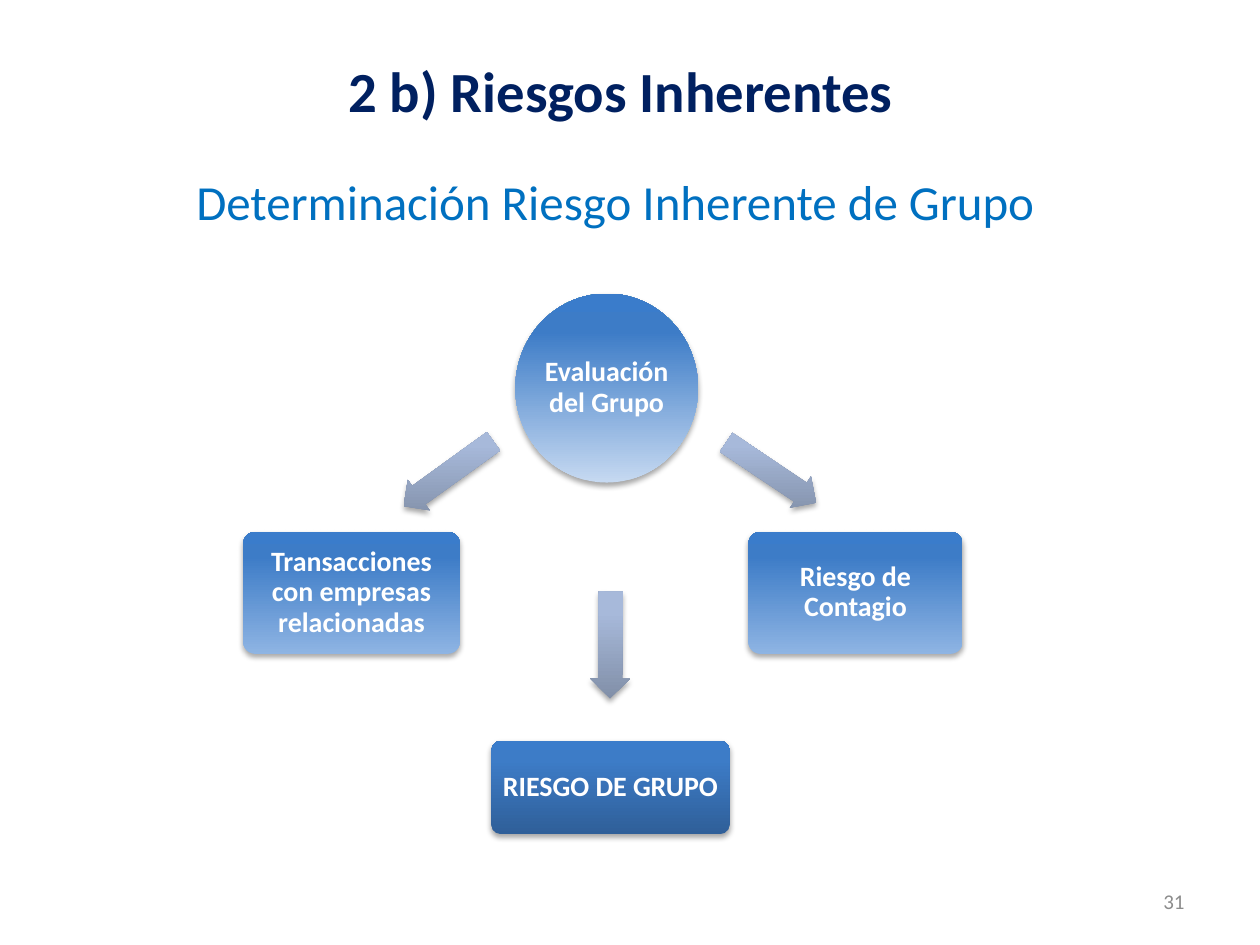
"""Builds the slide on how the inherent risk of a group is determined."""
from pptx import Presentation
from pptx.dml.color import RGBColor
from pptx.enum.shapes import MSO_SHAPE
from pptx.enum.text import MSO_ANCHOR, PP_ALIGN
from pptx.oxml import parse_xml
from pptx.oxml.ns import nsdecls
from pptx.util import Inches, Pt

OVAL, ROUNDED, ARROW = MSO_SHAPE.OVAL, MSO_SHAPE.ROUNDED_RECTANGLE, MSO_SHAPE.LEFT_ARROW
CENTER, LEFT, RIGHT = PP_ALIGN.CENTER, PP_ALIGN.LEFT, PP_ALIGN.RIGHT
TOP, MIDDLE = MSO_ANCHOR.TOP, MSO_ANCHOR.MIDDLE

NAVY = RGBColor(0x00, 0x20, 0x60)
BLUE = RGBColor(0x00, 0x70, 0xC0)
GRAY = RGBColor(0x8C, 0x8C, 0x8C)
WHITE = RGBColor(0xFF, 0xFF, 0xFF)
PALE_BLUE = RGBColor(0xC6, 0xD9, 0xF1)
LIGHT_BLUE = RGBColor(0x8E, 0xB4, 0xE3)
DARK_BLUE = RGBColor(0x2F, 0x5F, 0x99)
NODE_TOP = (RGBColor(0x3D, 0x7C, 0xC7), RGBColor(0x3A, 0x7C, 0xCB))
ARROW_BOTTOM = RGBColor(0x81, 0x8F, 0xA8)
ARROW_TOP = (RGBColor(0xA7, 0xB9, 0xDA), RGBColor(0xA7, 0xBA, 0xDC))


def write(shape, text, size, color, bold=False, align=CENTER, anchor=MIDDLE, inset=None):
    frame = shape.text_frame
    frame.word_wrap = True
    frame.vertical_anchor = anchor
    if inset is not None:
        for side in ("left", "right", "top", "bottom"):
            setattr(frame, f"margin_{side}", Inches(inset))
    paragraph = frame.paragraphs[0]
    paragraph.alignment = align
    run = paragraph.add_run()
    run.text = text
    font_format = {"name": "Calibri", "size": Pt(size), "bold": bold}
    for attribute, value in font_format.items():
        setattr(run.font, attribute, value)
    run.font.color.rgb = color
    return paragraph


def add_shaded(kind, box, bottom, top):
    shape = slide.shapes.add_shape(kind, *map(Inches, box))
    stops = "".join(
        f'<a:gs pos="{position}"><a:srgbClr val="{color}"/></a:gs>'
        for position, color in zip((0, 80000, 100000), (bottom, *top))
    )
    properties = shape._element.spPr
    properties.append(parse_xml(
        f'<a:gradFill rotWithShape="0" {nsdecls("a")}><a:gsLst>{stops}</a:gsLst>'
        '<a:lin ang="16200000" scaled="0"/></a:gradFill>'
    ))
    properties.append(parse_xml(
        f'<a:effectLst {nsdecls("a")}><a:outerShdw blurRad="40000" dist="23000" '
        'dir="5400000" rotWithShape="0"><a:srgbClr val="000000">'
        '<a:alpha val="35000"/></a:srgbClr></a:outerShdw></a:effectLst>'
    ))
    shape.line.fill.background()
    return shape


presentation = Presentation()
presentation.slide_width = Inches(10)
presentation.slide_height = Inches(7.5)
slide = presentation.slides.add_slide(presentation.slide_layouts[5])

title = slide.shapes.title
title_place = {"left": 0.28, "top": 0.36, "width": 9.29, "height": 0.71}
for attribute, value in title_place.items():
    setattr(title, attribute, Inches(value))
write(title, "2 b) Riesgos Inherentes", 32.4, NAVY, bold=True)

nodes = [
    (OVAL, (4.09, 2.33, 1.45, 1.5), PALE_BLUE, "Evaluación del Grupo"),
    (ROUNDED, (1.93, 4.22, 1.72, 0.97), LIGHT_BLUE, "Transacciones con empresas relacionadas"),
    (ROUNDED, (5.94, 4.22, 1.7, 0.97), LIGHT_BLUE, "Riesgo de Contagio"),
    (ROUNDED, (3.9, 5.88, 1.89, 0.74), DARK_BLUE, "RIESGO DE GRUPO"),
]
for kind, box, bottom, text in nodes:
    node = add_shaded(kind, box, bottom, NODE_TOP)
    if kind == ROUNDED:
        node.adjustments[0] = 0.1
    label = write(node, text, 16, WHITE, bold=True, inset=0.01)
    label.line_spacing = 0.9

arrows = [
    ((3.12, 3.61, 0.88, 0.3), 324.2),
    ((5.69, 3.6, 0.86, 0.3), 213.9),
    ((4.42, 4.96, 0.85, 0.32), 270.5),
]
for box, rotation in arrows:
    arrow = add_shaded(ARROW, box, ARROW_BOTTOM, ARROW_TOP)
    arrow.rotation = rotation
    arrow.adjustments[0] = 0.6
    arrow.adjustments[1] = 0.5

captions = [
    ((1.46, 1.31, 7.09, 0.57), "Determinación Riesgo Inherente de Grupo", 28, BLUE, LEFT, TOP),
    ((7.17, 6.95, 2.33, 0.4), "31", 12, GRAY, RIGHT, MIDDLE),
]
for box, text, size, color, align, anchor in captions:
    caption = slide.shapes.add_textbox(*map(Inches, box))
    write(caption, text, size, color, align=align, anchor=anchor)

presentation.save("out.pptx")
